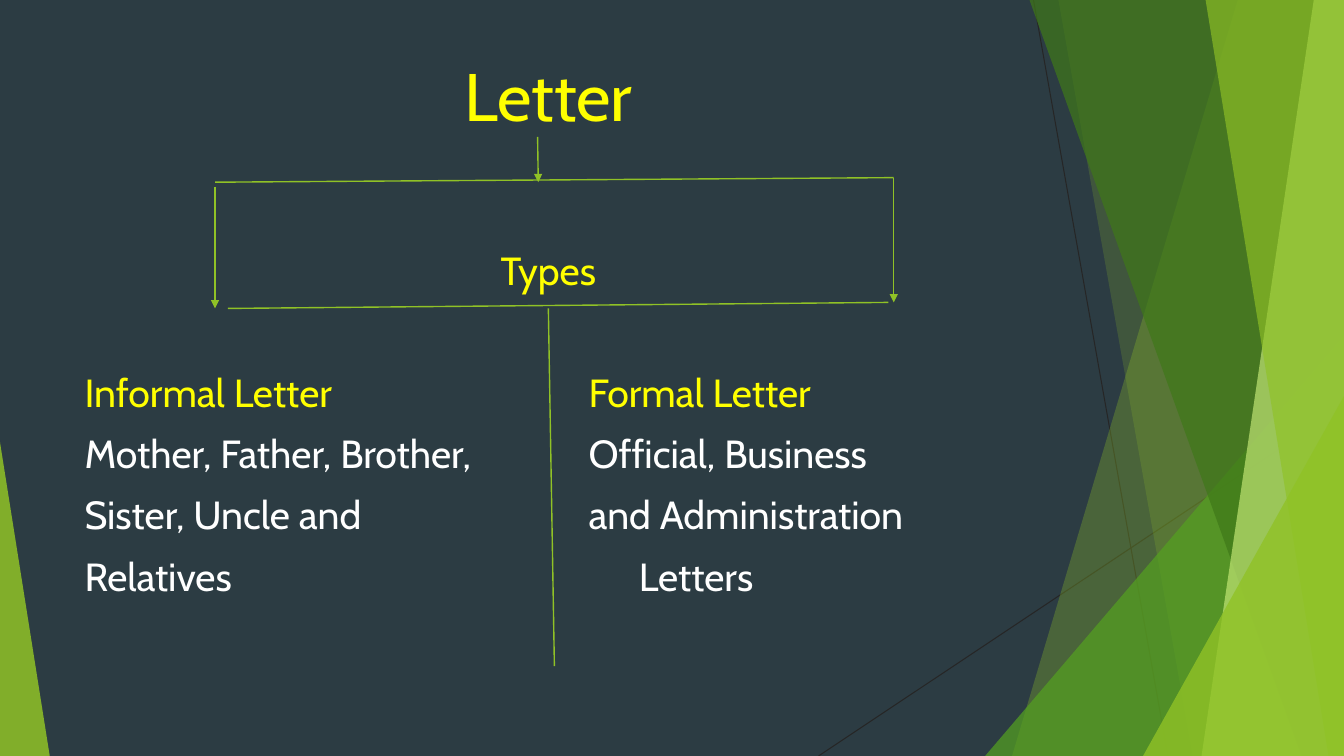
from lxml.etree import SubElement
from pptx import Presentation
from pptx.dml.color import RGBColor
from pptx.enum.shapes import MSO_CONNECTOR, MSO_SHAPE
from pptx.enum.text import PP_ALIGN
from pptx.oxml.ns import qn
from pptx.util import Inches, Pt

SLATE = RGBColor(0x2C, 0x3C, 0x43)
CHARCOAL = RGBColor(0x26, 0x26, 0x26)
LIME = RGBColor(0x90, 0xC2, 0x26)
PALE_LIME = RGBColor(0xC0, 0xE4, 0x74)
GREEN = RGBColor(0x54, 0xA0, 0x21)
DARK_GREEN = RGBColor(0x3F, 0x78, 0x19)
YELLOW = RGBColor(0xFF, 0xFF, 0x00)
WHITE = RGBColor(0xFF, 0xFF, 0xFF)


class LetterSlide:
    """Draws styled elements on one slide laid out on a grid of 100 columns by 100 rows."""

    font_name = "Cabin"
    body_size = 28
    space_before = 10

    def __init__(self, presentation):
        self.column = presentation.slide_width / 100
        self.row = presentation.slide_height / 100
        self.slide = presentation.slides.add_slide(presentation.slide_layouts[6])
        self.shapes = self.slide.shapes
        background = self.slide.background.fill
        background.solid()
        background.fore_color.rgb = SLATE

    def place(self, column, row):
        return round(column * self.column), round(row * self.row)

    def paint(self, shape, color, opacity):
        shape.shadow.inherit = False
        shape.line.fill.background()
        shape.fill.solid()
        shape.fill.fore_color.rgb = color
        color_element = shape.fill._xPr.find(qn("a:solidFill"))[0]
        SubElement(color_element, qn("a:alpha"), val=str(opacity * 1000))

    def facet(self, top_column, bottom_column, color, opacity):
        builder = self.shapes.build_freeform(*self.place(top_column, 0))
        corners = [(100, 0), (100, 100), (bottom_column, 100)]
        builder.add_line_segments([self.place(*corner) for corner in corners])
        self.paint(builder.convert_to_shape(), color, opacity)

    def triangle(self, left, top, width, apex, color, opacity):
        shape = self.shapes.add_shape(
            MSO_SHAPE.ISOSCELES_TRIANGLE, *self.place(left, top), *self.place(width, 100 - top)
        )
        shape.adjustments[0] = apex
        self.paint(shape, color, opacity)

    def line(self, start, end, color=LIME, width=1, arrow=False):
        connector = self.shapes.add_connector(
            MSO_CONNECTOR.STRAIGHT, *self.place(*start), *self.place(*end)
        )
        connector.line.color.rgb = color
        connector.line.width = Pt(width)
        if arrow:
            SubElement(connector.line._get_or_add_ln(), qn("a:tailEnd"), type="triangle")
        SubElement(connector._element.spPr, qn("a:effectLst"))

    def text(self, lines, left, top, width, height, size=body_size, align=PP_ALIGN.LEFT):
        box = self.shapes.add_textbox(*self.place(left, top), *self.place(width, height))
        text_frame = box.text_frame
        text_frame.word_wrap = True
        text_frame.text = "\n".join(lines)
        for number, paragraph in enumerate(text_frame.paragraphs):
            paragraph.alignment = align
            paragraph.space_before = Pt(self.space_before if number else 0)
            for run in paragraph.runs:
                run.font.name = self.font_name
                run.font.size = Pt(size)
                run.font.color.rgb = WHITE if number else YELLOW
        return text_frame

    def indent(self, paragraph, columns):
        paragraph._p.get_or_add_pPr().set("marL", str(round(columns * self.column)))


def main():
    presentation = Presentation()
    presentation.slide_width = Inches(13.33)
    presentation.slide_height = Inches(7.5)
    page = LetterSlide(presentation)

    page.line((76.9, 0), (86.9, 100), CHARCOAL, 0.75)
    page.line((100, 53.7), (60.9, 100), CHARCOAL, 0.75)
    page.facet(92.1, 75.3, LIME, 30)
    page.facet(78.75, 88.75, LIME, 20)
    page.triangle(73.3, 44.4, 26.7, 1, GREEN, 72)
    page.facet(76.6, 96.85, DARK_GREEN, 70)
    page.facet(97.75, 89.4, PALE_LIME, 70)
    page.facet(89.7, 98.85, LIME, 65)
    page.triangle(85.05, 52.4, 14.95, 1, LIME, 80)
    page.triangle(0, 58.5, 3.7, 0, LIME, 85)

    page.text(["Letter"], 5.55, 6.5, 70.5, 12, size=48, align=PP_ALIGN.CENTER)
    page.text(["Types"], 5.55, 31.9, 70.5, 8, align=PP_ALIGN.CENTER)
    informal = ["Informal Letter", "Mother, Father, Brother,", "Sister, Uncle and", "Relatives"]
    formal = ["Formal Letter", "Official, Business", "and Administration", "Letters"]
    page.text(informal, 5.55, 48.1, 33, 33)
    formal_frame = page.text(formal, 43.05, 48.1, 33, 33)
    page.indent(formal_frame.paragraphs[-1], 3.75)

    page.line((16, 24.1), (66.5, 23.5))
    page.line((16, 24.7), (16, 40.8), arrow=True)
    page.line((66.5, 23.5), (66.5, 40), arrow=True)
    page.line((40, 18.1), (40.05, 24.1), arrow=True)
    page.line((40.8, 40.8), (41.25, 88.1))
    page.line((16.95, 40.8), (66.1, 40))

    presentation.save("out.pptx")


if __name__ == "__main__":
    main()
